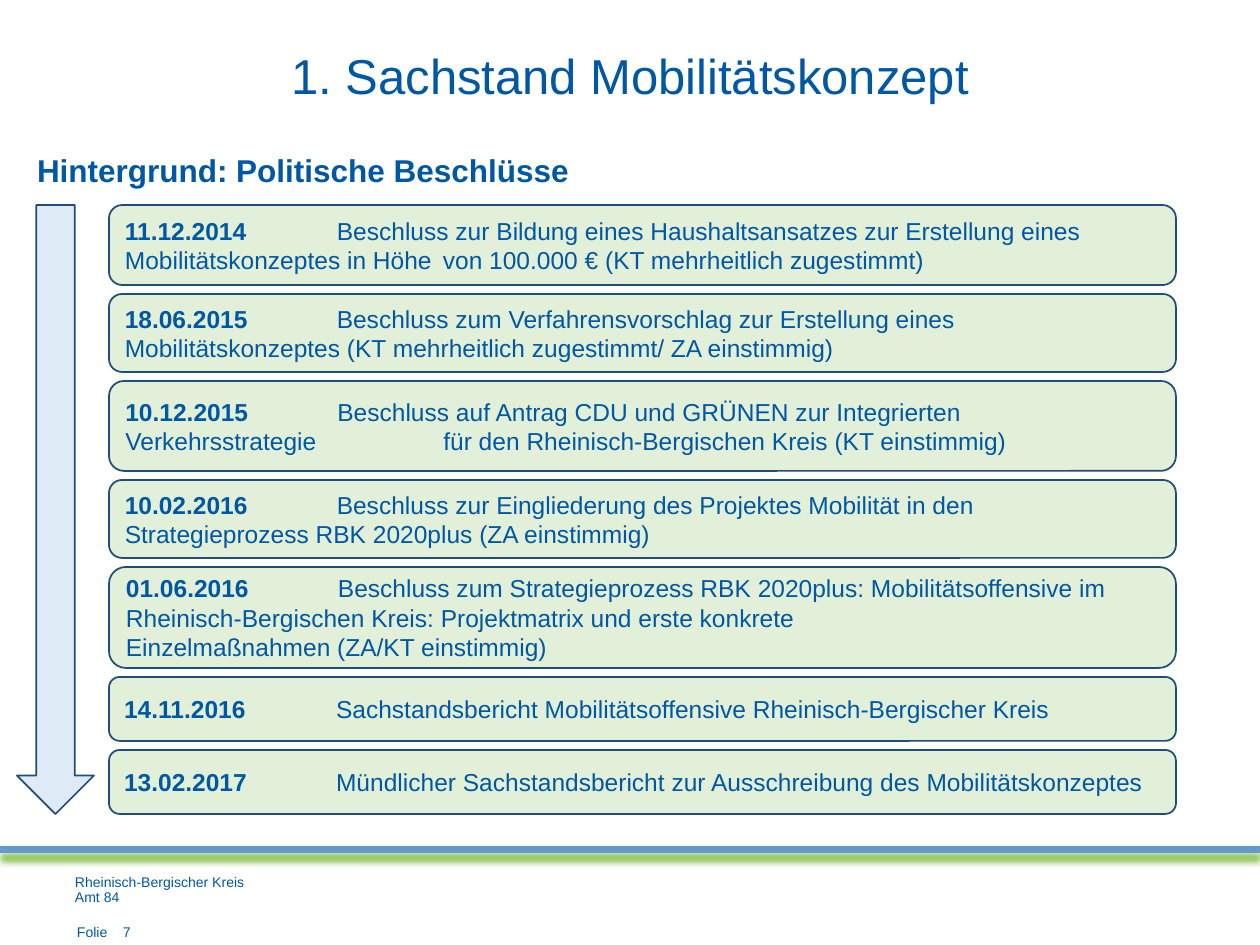
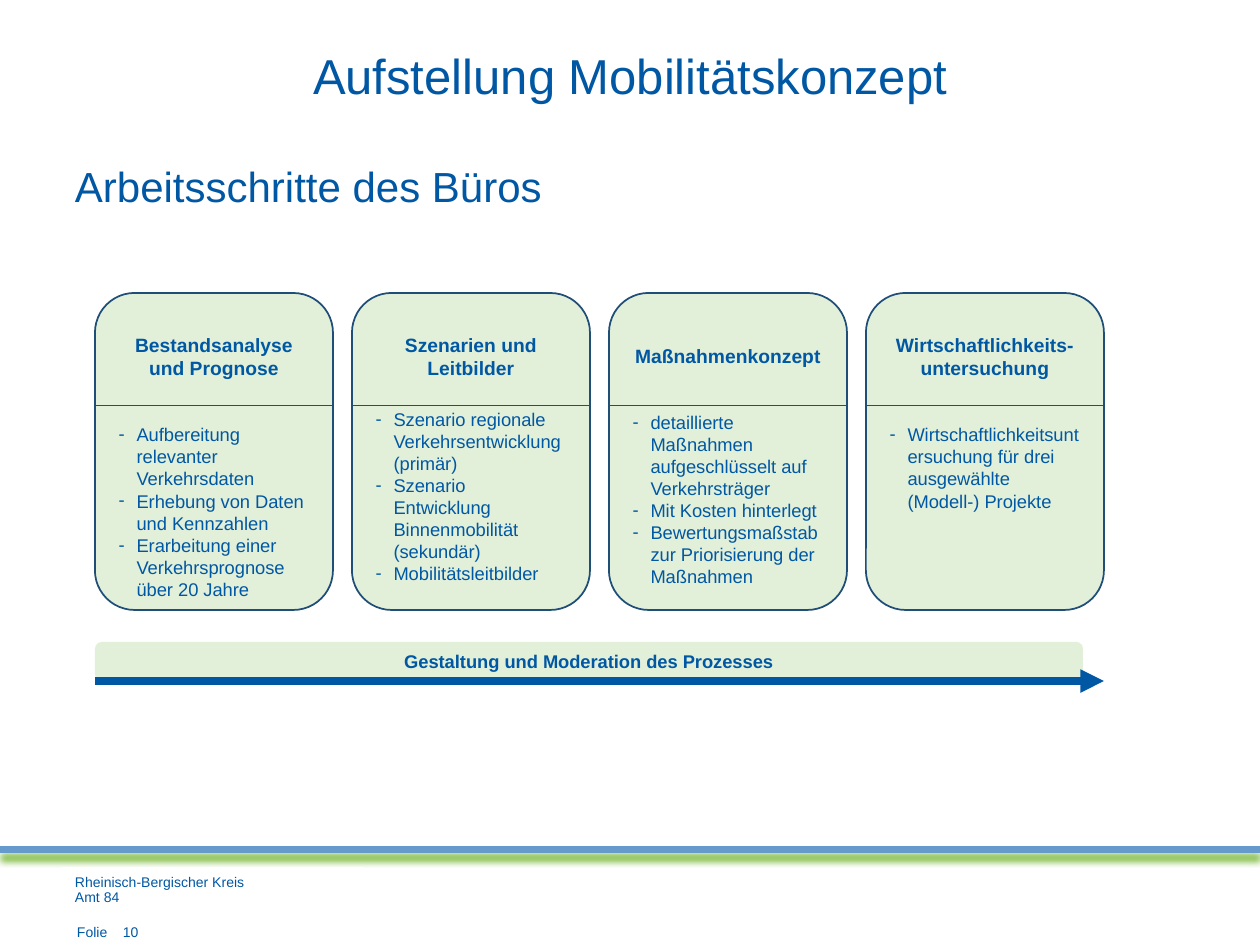
from lxml import etree
from pptx import Presentation
from pptx.dml.color import RGBColor
from pptx.enum.shapes import MSO_CONNECTOR, MSO_SHAPE
from pptx.enum.text import MSO_ANCHOR, PP_ALIGN
from pptx.oxml.ns import qn
from pptx.util import Emu, Pt

BLUE = RGBColor(0x00, 0x57, 0xA3)
NAVY = RGBColor(0x1F, 0x4E, 0x79)
PALE_GREEN = RGBColor(0xE2, 0xF0, 0xD9)
PALE_BLUE = RGBColor(0xDE, 0xEB, 0xF7)
BAND_BLUE = RGBColor(0x66, 0x99, 0xCC)
BAND_GREEN = RGBColor(0x6A, 0xB0, 0x23)
FONT = "Arial"
INSET = 12

DECISIONS = [
    (80, "11.12.2014", "Beschluss zur Bildung eines Haushaltsansatzes zur Erstellung eines\v"
     "Mobilitätskonzeptes in Höhe\tvon 100.000 € (KT mehrheitlich zugestimmt)"),
    (78, "18.06.2015", "Beschluss zum Verfahrensvorschlag zur Erstellung eines\v"
     "Mobilitätskonzeptes (KT mehrheitlich zugestimmt/ ZA einstimmig)"),
    (90, "10.12.2015", "Beschluss auf Antrag CDU und GRÜNEN zur Integrierten\v"
     "Verkehrsstrategie\t\tfür den Rheinisch-Bergischen Kreis (KT einstimmig)"),
    (78, "10.02.2016", "Beschluss zur Eingliederung des Projektes Mobilität in den\v"
     "Strategieprozess RBK 2020plus (ZA einstimmig)"),
    (101, "01.06.2016", "Beschluss zum Strategieprozess RBK 2020plus: Mobilitätsoffensive im\v"
     "Rheinisch-Bergischen Kreis: Projektmatrix und erste konkrete\v"
     "Einzelmaßnahmen (ZA/KT einstimmig)"),
    (64, "14.11.2016", "Sachstandsbericht Mobilitätsoffensive Rheinisch-Bergischer Kreis"),
    (64, "13.02.2017", "Mündlicher Sachstandsbericht zur Ausschreibung des Mobilitätskonzeptes"),
]

WORK_STEPS = [
    ("Bestandsanalyse und Prognose", 29, 25,
     ["Aufbereitung relevanter Verkehrsdaten", "Erhebung von Daten und Kennzahlen",
      "Erarbeitung einer Verkehrsprognose über 20 Jahre"]),
    ("Szenarien und Leitbilder", 29, 16,
     ["Szenario regionale Verkehrsentwicklung (primär)",
      "Szenario Entwicklung Binnenmobilität (sekundär)", "Mobilitätsleitbilder"]),
    ("Maßnahmenkonzept", 40, 25,
     ["detaillierte Maßnahmen aufgeschlüsselt auf Verkehrsträger", "Mit Kosten hinterlegt",
      "Bewertungsmaßstab zur Priorisierung der Maßnahmen"]),
    ("Wirtschaftlichkeits-untersuchung", 29, 25,
     ["Wirtschaftlichkeitsuntersuchung für drei ausgewählte (Modell-) Projekte"]),
]


def px(length):
    """Turn px at 126 to the inch into EMU."""
    return Emu(round(length * 914400 / 126))


def style(paragraph, size, bold=None, align=PP_ALIGN.LEFT):
    """Set the common font and alignment of a paragraph."""
    paragraph.alignment = align
    font = paragraph.font
    font.name, font.size, font.bold = FONT, Pt(size), bold
    font.color.rgb = BLUE


def set_tabs(paragraph, *stops):
    """Give a paragraph left tab stops, in px."""
    tabs = etree.SubElement(paragraph._p.get_or_add_pPr(), qn("a:tabLst"))
    for stop in stops:
        etree.SubElement(tabs, qn("a:tab"), pos=str(px(stop)), algn="l")


def set_dash(paragraph, indent):
    """Give a paragraph a hanging dash bullet."""
    properties = paragraph._p.get_or_add_pPr()
    properties.set("marL", str(px(indent)))
    properties.set("indent", str(-px(indent)))
    etree.SubElement(properties, qn("a:buFont"), typeface=FONT)
    etree.SubElement(properties, qn("a:buChar"), char="-")


def add_block(slide, kind, box, fill, line=NAVY):
    """Add a filled preset shape without shadow."""
    block = slide.shapes.add_shape(kind, *map(px, box))
    block.shadow.inherit = False
    block.fill.solid()
    block.fill.fore_color.rgb = fill
    if line is None:
        block.line.fill.background()
    else:
        block.line.color.rgb = line
        block.line.width = Pt(1)
    frame = block.text_frame
    frame.word_wrap = True
    frame.margin_left = frame.margin_right = px(INSET)
    return block


def add_rule(slide, left, right, y, color, width):
    """Add a horizontal line and return it with its empty effect list."""
    rule = slide.shapes.add_connector(MSO_CONNECTOR.STRAIGHT, px(left), px(y), px(right), px(y))
    rule.line.color.rgb = color
    rule.line.width = Pt(width)
    effects = etree.SubElement(rule._element.spPr, qn("a:effectLst"))
    return rule, effects


def add_label(slide, box, text, size, bold=None, anchor=MSO_ANCHOR.TOP, tabs=()):
    """Add a one-paragraph text box."""
    frame = slide.shapes.add_textbox(*map(px, box)).text_frame
    frame.word_wrap = True
    frame.vertical_anchor = anchor
    frame.margin_left = px(INSET)
    label = frame.paragraphs[0]
    label.text = text
    if tabs:
        set_tabs(label, *tabs)
    style(label, size, bold)


def add_footer(slide, number):
    """Add the coloured band, the sender and the slide number."""
    _, effects = add_rule(slide, 0, 1260, 850, BAND_BLUE, 4)
    shadow = etree.SubElement(effects, qn("a:outerShdw"), blurRad=str(Pt(4)), dist=str(Pt(4)),
                              dir="5400000", algn="t", rotWithShape="0")
    etree.SubElement(shadow, qn("a:srgbClr"), val=str(BAND_GREEN))

    sender = slide.shapes.add_table(2, 1, px(63), px(868), px(299), px(50)).table
    sender.first_row = sender.horz_banding = False
    for row, height in zip(sender.rows, (30, 20)):
        row.height = px(height)
        cell = row.cells[0]
        cell.fill.background()
        cell.vertical_anchor = MSO_ANCHOR.BOTTOM
        cell.margin_left = px(INSET)
    address = sender.cell(0, 0)
    address.text = "Rheinisch-Bergischer Kreis\nAmt 84"
    for line in address.text_frame.paragraphs:
        style(line, 8)
    add_label(slide, (65, 907, 149, 50), f"Folie\t{number}", 8, anchor=MSO_ANCHOR.MIDDLE, tabs=(46,))


def add_titled_slide(deck, title, number):
    """Add a title-only slide with the shared title style and footer."""
    slide = deck.slides.add_slide(deck.slide_layouts[5])
    heading = slide.shapes.title
    heading.left, heading.top, heading.width, heading.height = map(px, (63, -4, 1134, 158))
    heading.text_frame.text = title
    heading.text_frame.vertical_anchor = MSO_ANCHOR.MIDDLE
    style(heading.text_frame.paragraphs[0], 28, align=PP_ALIGN.CENTER)
    add_footer(slide, number)
    return slide


def add_timeline(slide, left, top, width, gap):
    """Stack the dated decisions beside a downward arrow."""
    total = sum(height for height, _, _ in DECISIONS) + gap * (len(DECISIONS) - 1)
    add_block(slide, MSO_SHAPE.DOWN_ARROW, (left - 92, top, 77, total), PALE_BLUE)
    for height, date, decision in DECISIONS:
        row = add_block(slide, MSO_SHAPE.ROUNDED_RECTANGLE, (left, top, width, height), PALE_GREEN)
        row.text_frame.vertical_anchor = MSO_ANCHOR.MIDDLE
        entry = row.text_frame.paragraphs[0]
        entry.text = f"\t{decision}"
        date_run = entry.add_run()
        date_run.text = date
        date_run.font.bold = True
        entry.runs[0]._r.addprevious(date_run._r)
        set_tabs(entry, 212, 318)
        style(entry, 14)
        top += height + gap


def add_step_card(slide, box, heading, inset_top, space, tasks):
    """Add one work step with its heading, divider and task list."""
    left, top, width, _ = box
    frame = add_block(slide, MSO_SHAPE.ROUNDED_RECTANGLE, box, PALE_GREEN).text_frame
    frame.vertical_anchor = MSO_ANCHOR.TOP
    frame.margin_top = px(inset_top)
    frame.text = heading
    style(frame.paragraphs[0], 11, True, PP_ALIGN.CENTER)
    for index, task in enumerate(tasks):
        item = frame.add_paragraph()
        item.text = task
        set_dash(item, 18)
        if index == 0:
            item.space_before = Pt(space)
        style(item, 10.5)
    add_rule(slide, left, left + width, top + 112, NAVY, 0.5)


def add_process_bar(slide, left, top, length):
    """Add the process label above its thick arrow."""
    bar = add_block(slide, MSO_SHAPE.ROUNDED_RECTANGLE, (left, top, length - 21, 39),
                    PALE_GREEN, line=None)
    bar.text_frame.vertical_anchor = MSO_ANCHOR.MIDDLE
    caption = bar.text_frame.paragraphs[0]
    caption.text = "Gestaltung und Moderation des Prozesses"
    style(caption, 10.5, True, PP_ALIGN.CENTER)
    arrow, _ = add_rule(slide, left, left + length, top + 39, BLUE, 4.5)
    etree.SubElement(arrow.line._get_or_add_ln(), qn("a:tailEnd"), type="triangle")


def build_decisions(deck):
    """Build the slide of political decisions."""
    slide = add_titled_slide(deck, "1. Sachstand Mobilitätskonzept", 7)
    add_label(slide, (25, 145, 752, 50), "Hintergrund: Politische Beschlüsse", 18, True)
    add_timeline(slide, 109, 205, 1067, 9)


def build_work_steps(deck):
    """Build the slide of work steps."""
    slide = add_titled_slide(deck, "Aufstellung Mobilitätskonzept", 10)
    add_label(slide, (63, 154, 1134, 60), "Arbeitsschritte des Büros", 24)
    left, width, gap = 95, 238, 19
    for index, step in enumerate(WORK_STEPS):
        add_step_card(slide, (left + index * (width + gap), 293, width, 317), *step)
    add_process_bar(slide, left, 642, 4 * width + 3 * gap)


def main():
    """Build and save the deck."""
    deck = Presentation()
    deck.slide_width, deck.slide_height = px(1260), px(945)
    build_decisions(deck)
    build_work_steps(deck)
    deck.save("out.pptx")


if __name__ == "__main__":
    main()
